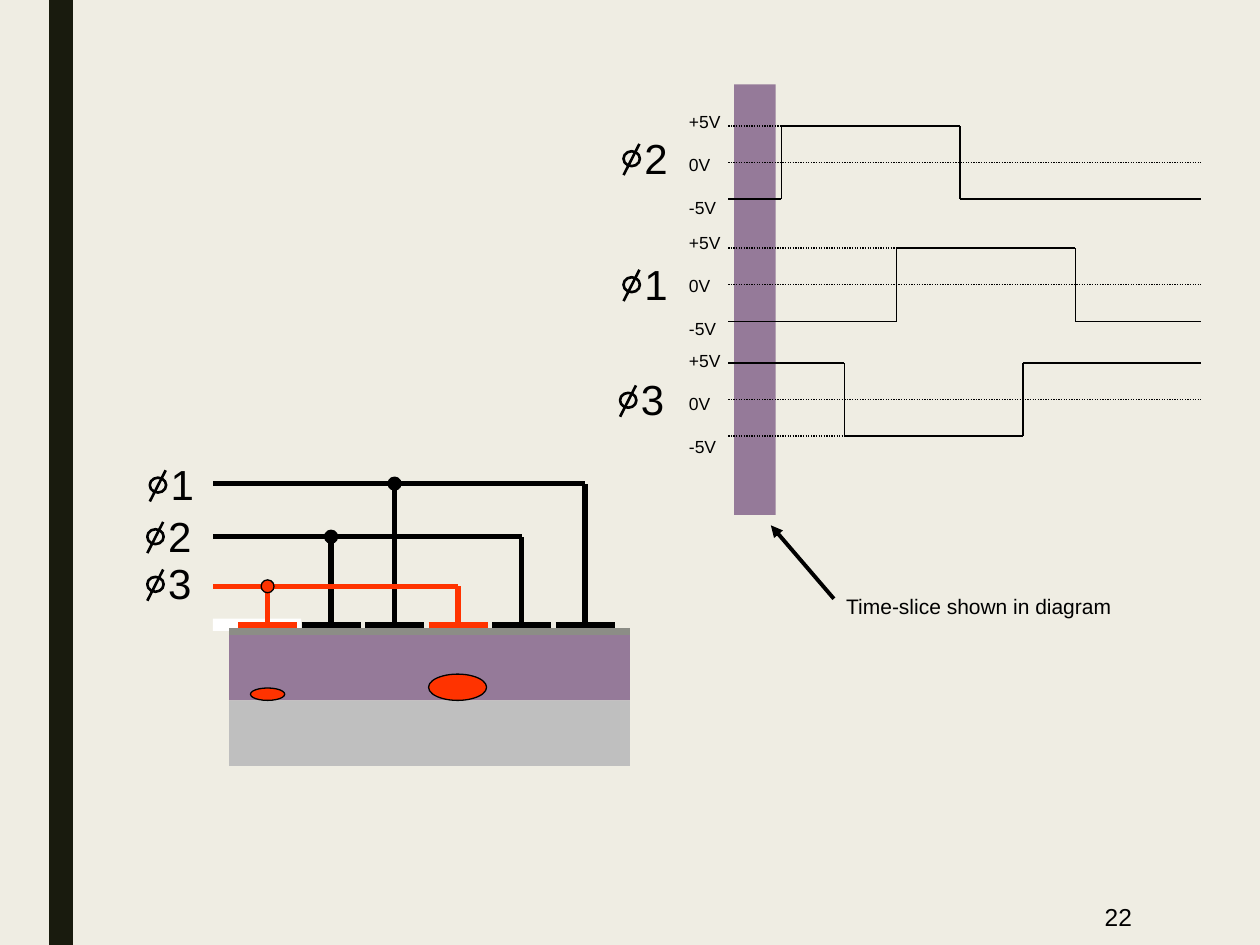
import itertools

import pptx
import pptx.dml.color
import pptx.enum.dml
import pptx.enum.shapes
import pptx.enum.text
import pptx.oxml
import pptx.oxml.ns
import pptx.util

Cm, Pt = pptx.util.Cm, pptx.util.Pt
RGB = pptx.dml.color.RGBColor.from_string
SHAPE = pptx.enum.shapes.MSO_SHAPE
ALIGN = pptx.enum.text.PP_ALIGN
ANCHOR = pptx.enum.text.MSO_ANCHOR
DOTTED = pptx.enum.dml.MSO_LINE.ROUND_DOT


class Theme:
    font = "Arial"
    background = RGB("EFEDE3")
    stripe = RGB("191B0E")
    ink = RGB("000000")
    active = RGB("FF3300")
    channel = RGB("957A99")
    substrate = RGB("BFBFBF")
    oxide = RGB("8C8D86")
    white = RGB("FFFFFF")
    phase_size = Pt(24)
    number_size = Pt(14)
    note_size = Pt(12)
    volt_size = Pt(10)


prs = pptx.Presentation()
prs.slide_width, prs.slide_height = Cm(25.4), Cm(19.05)
s = prs.slides.add_slide(prs.slide_layouts[6])
s.background.fill.solid()
s.background.fill.fore_color.rgb = Theme.background


def add_area(kind, x, y, w, h, fill=None, outline=None):
    """Add a preset shape; outline is its black line width in points."""
    sp = s.shapes.add_shape(kind, Cm(x), Cm(y), Cm(w), Cm(h))
    sp.shadow.inherit = False
    if fill is None:
        sp.fill.background()
    else:
        sp.fill.solid()
        sp.fill.fore_color.rgb = fill
    if outline is None:
        sp.line.fill.background()
    else:
        sp.line.color.rgb = Theme.ink
        sp.line.width = Pt(outline)


def add_line(x1, y1, x2, y2, width, color=Theme.ink, dash=None, arrow=False):
    line = s.shapes.add_connector(
        pptx.enum.shapes.MSO_CONNECTOR.STRAIGHT, Cm(x1), Cm(y1), Cm(x2), Cm(y2))
    line.line.color.rgb = color
    line.line.width = Pt(width)
    if dash is not None:
        line.line.dash_style = dash
    spPr = line._element.spPr
    if arrow:
        tail = pptx.oxml.parse_xml(
            f'<a:tailEnd {pptx.oxml.ns.nsdecls("a")} type="triangle"/>')
        spPr.find(pptx.oxml.ns.qn("a:ln")).append(tail)
    spPr.append(pptx.oxml.parse_xml(f'<a:effectLst {pptx.oxml.ns.nsdecls("a")}/>'))


# Side stripe, time slice and the CCD body
add_area(SHAPE.RECTANGLE, 0.99, 0, 0.48, 19.05, Theme.stripe)
add_area(SHAPE.RECTANGLE, 14.8, 1.7, 0.84, 10.36 - 1.7 + 0.02, Theme.channel)
body_left, body_width = 4.62, 8.08
add_area(SHAPE.RECTANGLE, body_left, 12.8, body_width, 1.32, Theme.channel)
add_area(SHAPE.RECTANGLE, body_left, 14.12, body_width, 1.32, Theme.substrate)
add_area(SHAPE.RECTANGLE, 4.29, 12.47, 1.78, 0.25, Theme.white)

# Gate electrodes, wired in turn to phases 3, 2, 1
gate_left, gate_pitch, gate_width, gate_y = 4.8, 1.28, 1.19, 12.62
bus_y = {1: 9.75, 2: 10.82, 3: 11.82}
phase_color = {1: Theme.ink, 2: Theme.ink, 3: Theme.active}
contacts = {1: [], 2: [], 3: []}
for i, phase in enumerate([3, 2, 1] * 2):
    x = gate_left + i * gate_pitch
    stem = x + gate_width / 2
    contacts[phase].append(stem)
    add_line(x, gate_y, x + gate_width, gate_y, 4.5, phase_color[phase])
    add_line(stem, gate_y, stem, bus_y[phase], 3, phase_color[phase])
add_line(body_left, 12.73, body_left + body_width, 12.73, 4.5, Theme.oxide)

for phase, (first, last) in contacts.items():
    add_line(last, bus_y[phase], 4.29, bus_y[phase], 3, phase_color[phase])
dot = 0.26
for phase, (first, last) in contacts.items():
    add_area(SHAPE.OVAL, first - dot / 2, bus_y[phase] - dot / 2, dot, dot,
             phase_color[phase], 0.75)

# Charge packets resting on the substrate
add_area(SHAPE.OVAL, 5.05, 13.87, 0.69, 0.25, Theme.active, 0.75)
add_area(SHAPE.OVAL, 8.64, 13.59, 1.17, 0.53, Theme.active, 0.75)

# Clock waveforms: resting level, pulse level, pulse start
start, end, pulse_width = 14.68, 24.21, 3.6
waves = [(4.01, 2.54, 15.75), (6.48, 5, 18.08), (7.32, 8.79, 17.02)]
for rest, pulse, rise in waves:
    fall = rise + pulse_width
    zero = (rest + pulse) / 2
    add_line(start, zero, end, zero, 0.75, dash=DOTTED)
    add_line(start, pulse, rise, pulse, 0.75, dash=DOTTED)
    points = [(start, rest), (rise, rest), (rise, pulse),
              (fall, pulse), (fall, rest), (end, rest)]
    for a, b in itertools.pairwise(points):
        add_line(*a, *b, 0.75)

add_line(16.81, 12.07, 15.54, 10.59, 2.25, arrow=True)

# Texts: left, top, width, height, lines, size
texts = [
    (19.74, 17.93, 3.33, 1.12, ["22"], Theme.number_size),
    (16.81, 11.84, 5.87, 0.76, ["Time-slice shown in diagram"], Theme.note_size),
]
for top in (2.11, 4.55, 6.93):
    texts.append((13.64, top, 1.14, 2.36, ["+5V", "0V", "-5V"], Theme.volt_size))

# Phase symbols: a slashed circle followed by the phase number
phases = [("1", 3.02, 9.63), ("2", 2.97, 10.67), ("3", 2.97, 11.63),
          ("2", 12.57, 3.05), ("1", 12.57, 5.59), ("3", 12.5, 7.92)]
for number, x, y in phases:
    add_area(SHAPE.OVAL, x, y, 0.33, 0.3, outline=1.5)
    add_line(x + 0.32, y - 0.15, x, y + 0.48, 1.5)
    texts.append((x + 0.17, y - 0.51, 0.99, 1.27, [number], Theme.phase_size))

for x, y, w, h, lines, size in texts:
    tf = s.shapes.add_textbox(Cm(x), Cm(y), Cm(w), Cm(h)).text_frame
    tf.word_wrap = size in (Theme.number_size, Theme.note_size)
    tf.text = "\n".join(lines)
    for i, p in enumerate(tf.paragraphs):
        p.font.name, p.font.size = Theme.font, size
        p.font.color.rgb = Theme.ink
        if i:
            p.space_before = Pt(12.5)
        if size == Theme.number_size:
            tf.vertical_anchor = ANCHOR.MIDDLE
            p.alignment = ALIGN.RIGHT

prs.save("out.pptx")
